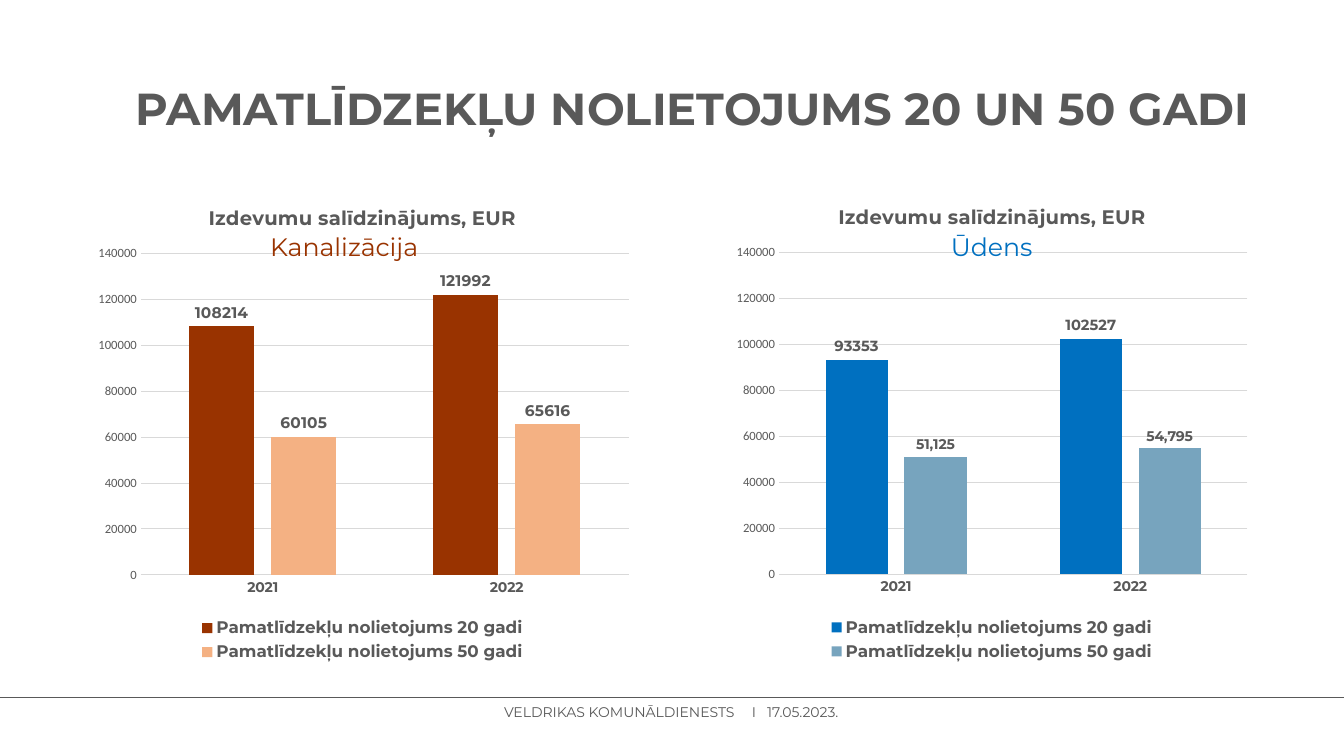
"""Build a slide comparing depreciation over 20 and 50 years in two column charts."""
import pptx
import pptx.chart.data
import pptx.dml.color
import pptx.enum.chart
import pptx.enum.shapes
import pptx.enum.text
import pptx.oxml
import pptx.oxml.ns
import pptx.util

rgb = pptx.dml.color.RGBColor.from_string
qn = pptx.oxml.ns.qn
nsdecls = pptx.oxml.ns.nsdecls
GREY, PALE = "595959", "D9D9D9"


def style(font, size, colour=GREY, bold=True, name="Montserrat"):
    font.size, font.bold, font.name = pptx.util.Pt(size), bold, name
    font.color.rgb = rgb(colour)


def write(frame, text, align="LEFT", anchor="TOP", spacing=0.9, inset=0, **look):
    frame.word_wrap = True
    frame.auto_size = pptx.enum.text.MSO_AUTO_SIZE.NONE
    frame.vertical_anchor = pptx.enum.text.MSO_ANCHOR[anchor]
    frame.margin_left = frame.margin_right = pptx.util.Inches(inset)
    frame.margin_top = frame.margin_bottom = pptx.util.Inches(inset / 2)
    paragraph = frame.paragraphs[0]
    paragraph.alignment = pptx.enum.text.PP_ALIGN[align]
    paragraph.line_spacing = spacing
    run = paragraph.add_run()
    run.text = text
    style(run.font, **look)
    return paragraph


deck = pptx.Presentation()
deck.slide_width = pptx.util.Inches(13.33)
deck.slide_height = pptx.util.Inches(7.5)
column, row = deck.slide_width / 100, deck.slide_height / 100
slide = deck.slides.add_slide(deck.slide_layouts[5])

rule_y = int(92.27 * row)
rule = slide.shapes.add_connector(
    pptx.enum.shapes.MSO_CONNECTOR.STRAIGHT, 0, rule_y, deck.slide_width, rule_y)
rule.line.color.rgb = rgb(GREY)
rule.line.width = pptx.util.Pt(0.75)
rule._element.spPr.append(pptx.oxml.parse_xml(f"<a:effectLst {nsdecls('a')}/>"))

footer = slide.shapes.add_textbox(
    int(37.5 * column), int(93.07 * row), int(30 * column), int(2.27 * row))
footer_line = write(footer.text_frame, "VELDRIKAS KOMUNĀLDIENESTS\tI\t17.05.2023.",
                    spacing=pptx.util.Pt(12), size=10, bold=False)
tabs = "".join(f'<a:tab pos="{int(stop * column)}" algn="l"/>' for stop in (18.45, 19.57))
footer_line._p.get_or_add_pPr().append(
    pptx.oxml.parse_xml(f"<a:tabLst {nsdecls('a')}>{tabs}</a:tabLst>"))

heading = slide.shapes.title
heading.left, heading.top = int(8.55 * column), int(5.07 * row)
heading.width, heading.height = int(86.03 * column), int(19.33 * row)
write(heading.text_frame, "PAMATLĪDZEKĻU NOLIETOJUMS 20 UN 50 GADI",
      align="CENTER", anchor="MIDDLE", inset=0.1, size=32)

services = [
    ("Kanalizācija", 20.1, 6.35, 24.65, 41.25,
     [(20, (108214, 121992), "993300", 11, "General"),
      (50, (60105, 65616), "F4B183", 11, "General")]),
    ("Ūdens", 70.75, 54, 24.55, 39.6,
     [(20, (93353, 102527), "0070C0", 10.5, "General"),
      (50, (51125, 54795), "77A4BE", 10, "#,##0")]),
]
title_share = 23.4

for service, caption_left, left, top, width, costs in services:
    data = pptx.chart.data.CategoryChartData()
    data.categories = ["2021", "2022"]
    for years, values, *_ in costs:
        data.add_series(f"Pamatlīdzekļu nolietojums {years} gadi", values)
    chart = slide.shapes.add_chart(
        pptx.enum.chart.XL_CHART_TYPE.COLUMN_CLUSTERED, int(left * column),
        int(top * row), int(width * column), int(63.47 * row), data).chart
    style(chart.font, 10, "000000", False, "Calibri")

    chart.has_title = True
    write(chart.chart_title.text_frame, "Izdevumu salīdzinājums, EUR",
          align="CENTER", spacing=1.0, size=14)
    chart.chart_title.include_in_layout = False

    chart.has_legend = True
    chart.legend.position = pptx.enum.chart.XL_LEGEND_POSITION.BOTTOM
    chart.legend.include_in_layout = False
    style(chart.legend.font, 12)

    years_axis, euro_axis = chart.category_axis, chart.value_axis
    for axis in (years_axis, euro_axis):
        axis.major_tick_mark = axis.minor_tick_mark = pptx.enum.chart.XL_TICK_MARK.NONE
    style(years_axis.tick_labels.font, 10)
    style(euro_axis.tick_labels.font, 9, bold=False, name="Calibri")
    euro_axis.minimum_scale, euro_axis.maximum_scale = 0, 140000
    euro_axis.major_unit = 20000
    euro_axis.format.line.fill.background()
    for line in (years_axis.format.line, euro_axis.major_gridlines.format.line):
        line.color.rgb = rgb(PALE)
        line.width = pptx.util.Pt(0.75)

    plot = chart.plots[0]
    plot.gap_width, plot.overlap, plot.vary_by_categories = 150, -27, False
    for series, (_, _, colour, label_size, number_format) in zip(plot.series, costs):
        series.format.fill.solid()
        series.format.fill.fore_color.rgb = rgb(colour)
        labels = series.data_labels
        labels.show_value = True
        labels.position = pptx.enum.chart.XL_LABEL_POSITION.OUTSIDE_END
        labels.number_format, labels.number_format_is_linked = number_format, False
        style(labels.font, label_size)

    plot_area = chart._chartSpace.chart.plotArea
    title_x = (1 - title_share / width) / 2
    for host, index, target, shares in (
            (plot_area, 0, '<c:layoutTarget val="inner"/>',
             {"x": 0.1, "y": 0.14, "w": 0.88, "h": 0.67}),
            (chart.chart_title._element, 1, "", {"x": title_x, "y": 0.03})):
        for automatic in host.findall(qn("c:layout")):
            host.remove(automatic)
        modes = "".join(f'<c:{side}Mode val="edge"/>' for side in "xy")
        sizes = "".join(f'<c:{side} val="{share:.3f}"/>' for side, share in shares.items())
        host.insert(index, pptx.oxml.parse_xml(
            f"<c:layout {nsdecls('c')}><c:manualLayout>{target}{modes}{sizes}"
            "</c:manualLayout></c:layout>"))

    caption = slide.shapes.add_textbox(
        int(caption_left * column), int(31 * row), int(15 * column), int(4 * row))
    write(caption.text_frame, service, size=18, colour=costs[0][2], bold=False)

deck.save("out.pptx")
